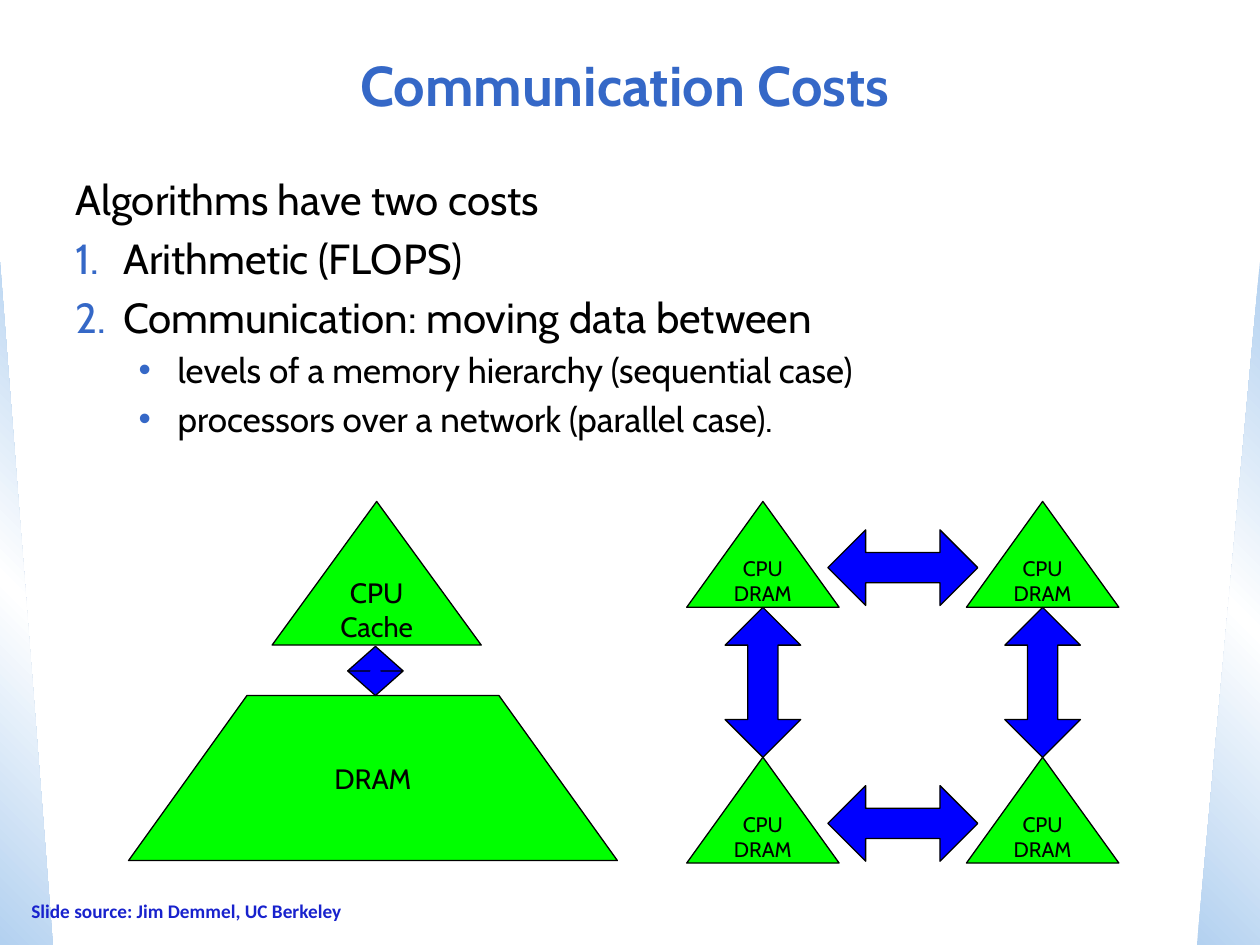
from copy import deepcopy
from dataclasses import dataclass

from lxml import etree
from pptx import Presentation
from pptx.dml.color import RGBColor
from pptx.enum import shapes, text
from pptx.oxml import ns
from pptx.util import Inches, Pt

SHAPE = shapes.MSO_SHAPE


@dataclass(frozen=True)
class Theme:
    font: str = "Cabin"
    source_font: str = "Calibri"
    accent: str = "3568C7"
    ink: str = "000000"
    memory: str = "00FF00"
    link: str = "0000FF"
    source: str = "1822CD"
    edge: tuple = ("B3D1F0", "FFFFFF", "B3D1F0")
    title_size: int = 32
    body_size: int = 24
    sub_size: int = 20
    label_size: int = 16
    small_size: int = 12
    source_size: int = 11
    line_width: float = 0.75


class SlideBuilder:
    def __init__(self, s, theme):
        self.s, self.theme = s, theme
        self.canvas = s.shapes

    def group(self):
        """Send the diagram parts that follow into a new group."""
        self.canvas = self.s.shapes.add_group_shape().shapes

    def add_words(self, p, words, size, **formats):
        r = p.add_run()
        r.text = words
        values = {"name": self.theme.font, "size": Pt(size), "bold": False}
        color = formats.pop("color", self.theme.ink)
        for key, value in {**values, **formats}.items():
            setattr(r.font, key, value)
        r.font.color.rgb = RGBColor.from_string(color)

    def place(self, sp, left, top, width, height, **frame):
        box = {"left": left, "top": top, "width": width, "height": height}
        for key, value in box.items():
            setattr(sp, key, Inches(value))
        frame = {"word_wrap": True, "auto_size": text.MSO_AUTO_SIZE.NONE, **frame}
        for key, value in frame.items():
            setattr(sp.text_frame, key, value)
        return sp.text_frame

    def title(self, words, *box):
        tf = self.place(self.s.shapes.title, *box, vertical_anchor=text.MSO_ANCHOR.MIDDLE)
        p = tf.paragraphs[0]
        p.alignment = text.PP_ALIGN.CENTER
        self.add_words(p, words, self.theme.title_size, bold=True, color=self.theme.accent)

    def bullet(self, p, kind, margin, hanging):
        pPr = p._p.get_or_add_pPr()
        pPr.set("marL", str(Inches(margin)))
        pPr.set("indent", str(-Inches(hanging)))
        if kind == "none":
            etree.SubElement(pPr, ns.qn("a:buNone"))
            return
        color = etree.SubElement(pPr, ns.qn("a:buClr"))
        etree.SubElement(color, ns.qn("a:srgbClr"), val=self.theme.accent)
        if kind == "number":
            etree.SubElement(pPr, ns.qn("a:buFont"), typeface=self.theme.font)
            etree.SubElement(pPr, ns.qn("a:buAutoNum"), type="arabicPeriod")
        else:
            etree.SubElement(pPr, ns.qn("a:buFont"), typeface="Arial")
            etree.SubElement(pPr, ns.qn("a:buChar"), char="•")

    def body(self, items, *box):
        """Fill the body placeholder with (bullet kind, words) items."""
        tf = self.place(self.s.placeholders[1], *box)
        for i, (kind, words) in enumerate(items):
            p = tf.add_paragraph() if i else tf.paragraphs[0]
            sub = kind == "dot"
            size = self.theme.sub_size if sub else self.theme.body_size
            p.level = int(sub)
            self.bullet(p, kind, *((0.81, 0.31) if sub else (0.38, 0.38)))
            p.space_before = Pt(0.2 * size if i else 0)
            self.add_words(p, words, size)

    def paint(self, sp, fill):
        sp.shadow.inherit = False
        sp.fill.solid()
        sp.fill.fore_color.rgb = RGBColor.from_string(fill)
        sp.line.color.rgb = RGBColor.from_string(self.theme.ink)
        sp.line.width = Pt(self.theme.line_width)

    def label(self, sp, lines, size):
        tf = sp.text_frame
        tf.word_wrap = False
        tf.vertical_anchor = text.MSO_ANCHOR.MIDDLE
        for i, words in enumerate(lines):
            p = tf.add_paragraph() if i else tf.paragraphs[0]
            p.alignment = text.PP_ALIGN.CENTER
            self.add_words(p, words, size)

    def shape(self, kind, *box):
        return self.canvas.add_shape(kind, *map(Inches, box))

    def triangle(self, lines, size, *box):
        sp = self.shape(SHAPE.ISOSCELES_TRIANGLE, *box)
        self.paint(sp, self.theme.memory)
        self.label(sp, lines, size)

    def arrow(self, *box, head=0.4, rotation=0):
        sp = self.shape(SHAPE.UP_DOWN_ARROW, *box)
        sp.adjustments[0], sp.adjustments[1] = 0.5, head
        sp.rotation = rotation
        self.paint(sp, self.theme.link)

    def polygon(self, points, lines, size):
        start, *rest = [(Inches(x), Inches(y)) for x, y in points]
        builder = self.canvas.build_freeform(*start)
        builder.add_line_segments(rest, close=True)
        sp = builder.convert_to_shape()
        self.paint(sp, self.theme.memory)
        self.label(sp, lines, size)

    def edge(self, *box, angle, flip=False):
        """Draw a shaded wedge along one side of the slide."""
        sp = self.shape(SHAPE.RIGHT_TRIANGLE, *box)
        sp.shadow.inherit = False
        sp.line.fill.background()
        sp.fill.gradient()
        sp.fill.gradient_angle = angle
        first = sp._element.spPr.find(".//" + ns.qn("a:gs"))
        first.addnext(deepcopy(first))
        for i, (stop, color) in enumerate(zip(sp.fill.gradient_stops, self.theme.edge)):
            stop.position = i / 2
            stop.color.rgb = RGBColor.from_string(color)
        if flip:
            sp._element.spPr.find(ns.qn("a:xfrm")).set("flipH", "1")

    def source(self, words, *box):
        tf = self.place(self.s.shapes.add_textbox(0, 0, 0, 0), *box)
        self.add_words(tf.paragraphs[0], words, self.theme.source_size, bold=True,
                       name=self.theme.source_font, color=self.theme.source)


def sequential_case(b):
    b.group()
    size = b.theme.label_size
    b.triangle(["CPU", "Cache"], size, 2.16, 3.98, 1.66, 1.14)
    b.polygon([(1.02, 6.83), (1.96, 5.52), (3.96, 5.52), (4.9, 6.83)], ["DRAM"], size)
    b.arrow(2.76, 5.13, 0.44, 0.39, head=0.2)


def parallel_case(b):
    b.group()
    columns, rows = (5.45, 7.67), (3.98, 6.01)
    width, height = 1.21, 0.84
    thick, length = 0.6, 1.19
    for x in columns:
        for y in rows:
            b.triangle(["CPU", "DRAM"], b.theme.small_size, x, y, width, height)
        b.arrow(x + (width - thick) / 2, rows[0] + height, thick, length)
    middle = (sum(columns) + width) / 2
    for y in rows:
        b.arrow(middle - thick / 2, y - 0.07, thick, length, rotation=270)


def main():
    prs = Presentation()
    prs.slide_width, prs.slide_height = Inches(10), Inches(7.5)
    b = SlideBuilder(prs.slides.add_slide(prs.slide_layouts[1]), Theme())
    b.edge(0, 2.08, 0.42, 5.42, angle=45)
    b.edge(9.5, 2.08, 0.5, 5.42, angle=315, flip=True)
    b.title("Communication Costs", 0.25, 0.25, 9.42, 0.83)
    b.body([
        ("none", "Algorithms have two costs"),
        ("number", "Arithmetic (FLOPS)"),
        ("number", "Communication: moving data between"),
        ("dot", "levels of a memory hierarchy (sequential case)"),
        ("dot", "processors over a network (parallel case)."),
    ], 0.5, 1.33, 9, 5.58)
    sequential_case(b)
    parallel_case(b)
    b.source("Slide source: Jim Demmel, UC Berkeley", 0.15, 7.09, 2.75, 0.33)
    prs.save("out.pptx")


if __name__ == "__main__":
    main()
